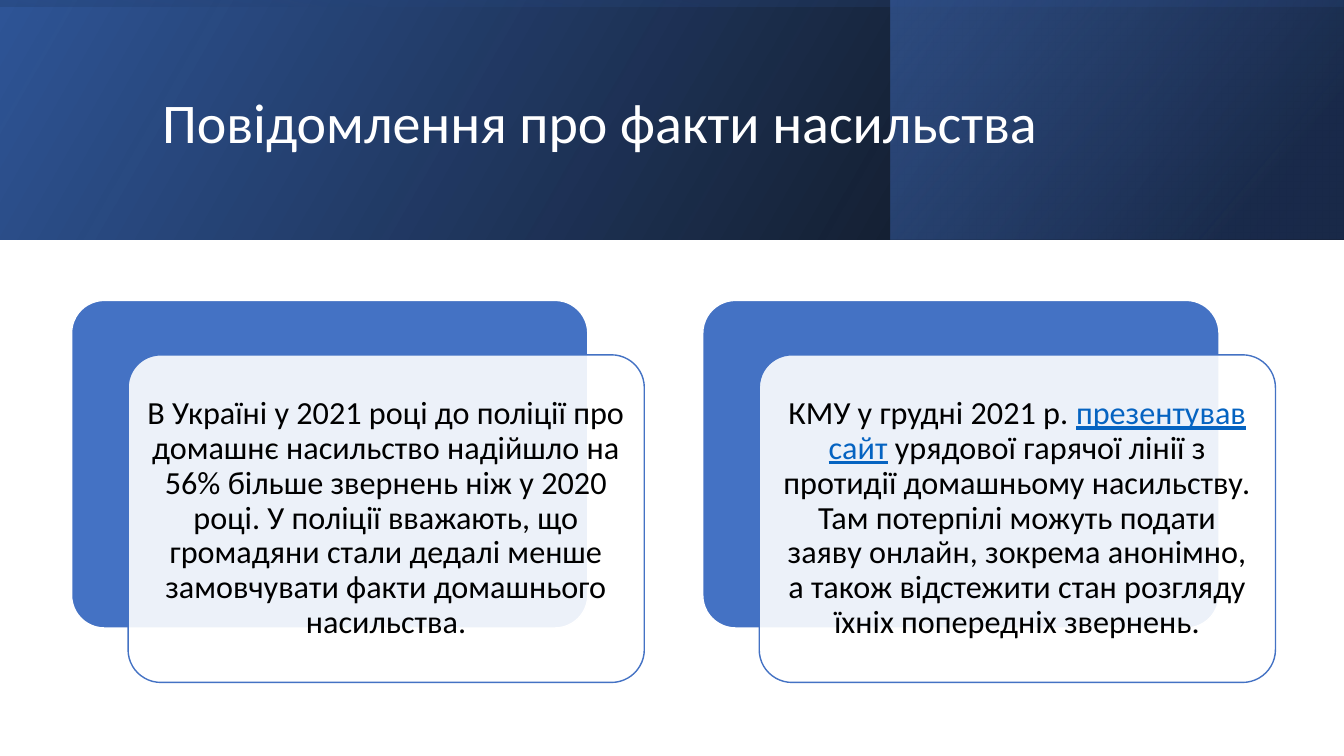
"""Build a slide with a gradient header and two layered text cards."""
from lxml import etree
from pptx import Presentation
from pptx import util as u
from pptx.dml.color import RGBColor
from pptx.enum import shapes, text
from pptx.oxml import parse_xml
from pptx.oxml.ns import qn

NS = "http://schemas.openxmlformats.org/drawingml/2006/main"
FONT = "Calibri"
BLUE, WHITE, BLACK, LINK = "4472C4", "FFFFFF", "000000", "0563C1"

TITLE = "Повідомлення про факти насильства"
BANDS = [
    ((0, 0, 13.33, 2.38), 0, 330, [(0, BLACK, 96), (100, "2F5597", 100)]),
    ((8.83, 0, 4.49, 2.38), 0, 320, [(19, "203864", 68), (100, BLUE, 48)]),
    ((5.48, -5.48, 2.37, 13.33), 270, 350, [(23, "2F5597", 16), (99, BLACK, 45)]),
]
CARDS = [
    [("В Україні у 2021 році до поліції про домашнє насильство надійшло на 56% "
      "більше звернень ніж у 2020 році. У поліції вважають, що громадяни стали "
      "дедалі менше замовчувати факти домашнього насильства.", False)],
    [("КМУ у грудні 2021 р. ", False),
     ("презентував сайт", True),
     (" урядової гарячої лінії з протидії домашньому насильству. Там потерпілі "
      "можуть подати заяву онлайн, зокрема анонімно, а також відстежити стан "
      "розгляду їхніх попередніх звернень.", False)],
]
CARD_X, CARD_Y, CARD_W, CARD_H = 0.71, 2.98, 5.12, 3.25
STEP, SHIFT_X, SHIFT_Y, PAD = 6.26, 0.56, 0.54, 0.1


def color(value):
    return RGBColor.from_string(value)


def add_box(s, kind, box):
    sp = s.shapes.add_shape(kind, *map(u.Inches, box))
    sp.shadow.inherit = False
    return sp


def add_band(s, box, rotation, angle, stops):
    sp = add_box(s, shapes.MSO_SHAPE.RECTANGLE, box)
    sp.rotation = rotation
    sp.line.fill.background()
    spPr = sp.element.spPr
    spPr.find(qn("a:xfrm")).set("flipH", "1")
    marks = "".join(
        f'<a:gs pos="{pos * 1000}"><a:srgbClr val="{c}">'
        f'<a:alpha val="{alpha * 1000}"/></a:srgbClr></a:gs>'
        for pos, c, alpha in stops)
    spPr.find(qn("a:prstGeom")).addnext(parse_xml(
        f'<a:gradFill xmlns:a="{NS}" rotWithShape="1"><a:gsLst>{marks}</a:gsLst>'
        f'<a:lin ang="{angle * 60000}" scaled="0"/></a:gradFill>'))


def add_panel(s, x, y, fill, line, alpha=100):
    sp = add_box(s, shapes.MSO_SHAPE.ROUNDED_RECTANGLE, (x, y, CARD_W, CARD_H))
    sp.adjustments[0] = 0.1
    sp.fill.solid()
    sp.fill.fore_color.rgb = color(fill)
    sp.line.color.rgb = color(line)
    sp.line.width = u.Pt(1)
    if alpha < 100:
        clr = sp.element.spPr.find(qn("a:solidFill")).find(qn("a:srgbClr"))
        etree.SubElement(clr, qn("a:alpha"), val=str(alpha * 1000))


def add_text(s, box, runs, size, ink, align, inset_x, inset_y):
    tf = s.shapes.add_textbox(*map(u.Inches, box)).text_frame
    tf.word_wrap = True
    tf.vertical_anchor = text.MSO_ANCHOR.MIDDLE
    tf.margin_left = tf.margin_right = u.Inches(inset_x)
    tf.margin_top = tf.margin_bottom = u.Inches(inset_y)
    p = tf.paragraphs[0]
    p.alignment, p.line_spacing = align, 0.9
    p.font.name, p.font.size = FONT, u.Pt(size)
    for words, linked in runs:
        r = p.add_run()
        r.text = words
        r.font.color.rgb = color(LINK if linked else ink)
        if linked:
            r.font.underline = True


def main():
    prs = Presentation()
    prs.slide_width, prs.slide_height = u.Inches(13.33), u.Inches(7.5)
    s = prs.slides.add_slide(prs.slide_layouts[6])
    for band in BANDS:
        add_band(s, *band)
    add_text(s, (1.51, 0.38, 10.63, 1.72), [(TITLE, False)], 40, WHITE,
             text.PP_ALIGN.LEFT, 0.1, 0.05)
    for i, runs in enumerate(CARDS):
        x = CARD_X + i * STEP
        front_x, front_y = x + SHIFT_X, CARD_Y + SHIFT_Y
        add_panel(s, x, CARD_Y, BLUE, WHITE)
        add_panel(s, front_x, front_y, WHITE, BLUE, 90)
        box = (front_x + PAD, front_y + PAD, CARD_W - 2 * PAD, CARD_H - 2 * PAD)
        add_text(s, box, runs, 23, BLACK, text.PP_ALIGN.CENTER, 0.09, 0.09)
    prs.save("out.pptx")


if __name__ == "__main__":
    main()
